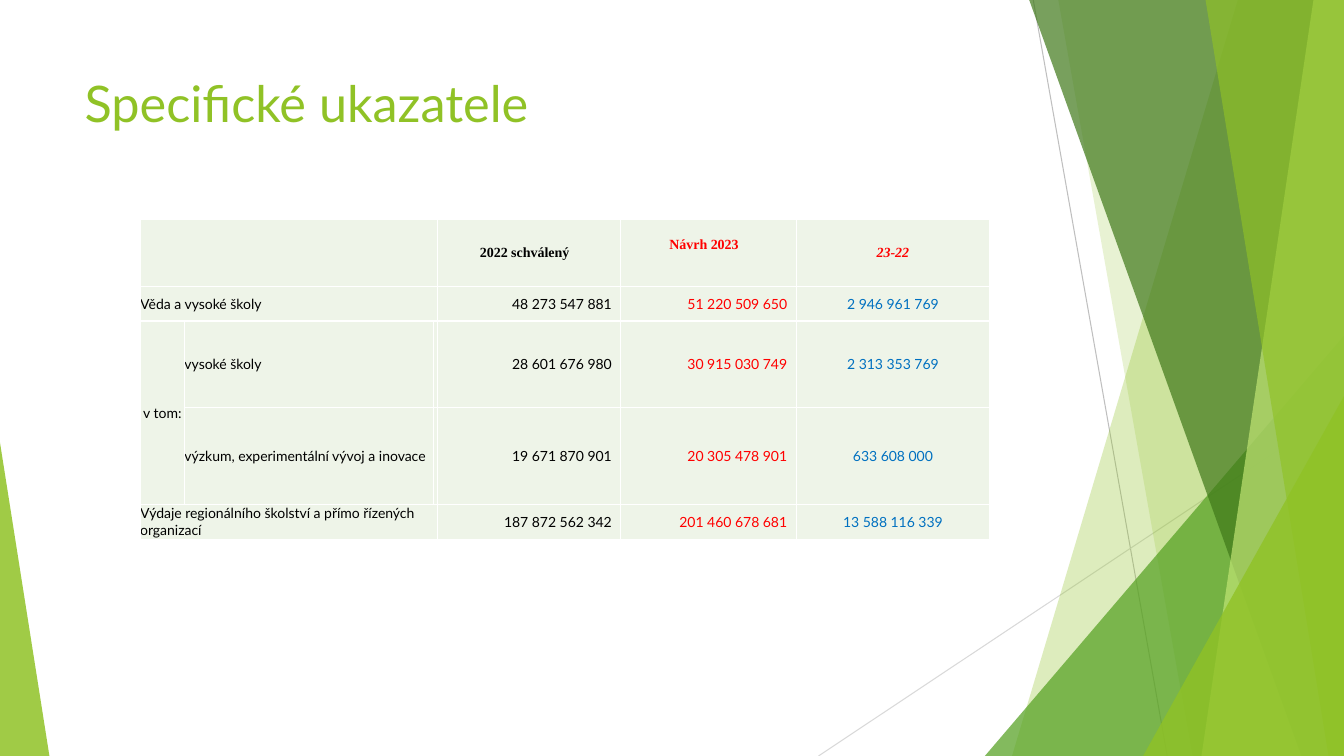
from dataclasses import dataclass

from lxml.etree import SubElement
from pptx import Presentation
from pptx.dml.color import RGBColor
from pptx.enum.shapes import MSO_CONNECTOR as Connector, MSO_SHAPE as Shape
from pptx.enum.text import MSO_ANCHOR as Anchor, PP_ALIGN as Align
from pptx.oxml.ns import qn
from pptx.util import Inches, Pt


@dataclass(frozen=True)
class Theme:
    green: str = "90C226"
    leaf: str = "54A021"
    forest: str = "3F7819"
    lime: str = "C0E474"
    cell: str = "EEF4E8"
    white: str = "FFFFFF"
    black: str = "000000"
    red: str = "FF0000"
    blue: str = "0070C0"
    body_font: str = "Lato"
    header_font: str = "Times New Roman"
    title_size: int = 36
    table_size: int = 10
    inset: float = 0.09


THEME = Theme()
WIDTH, HEIGHT = Inches(13.333), Inches(7.5)

# Decoration, back to front, in percent of the slide's width and height
RAYS = [((76.88, 0), (86.85, 100), "BFBFBF"), ((100, 53.73), (60.9, 100), "D9D9D9")]
BACK_BANDS = [(92.1, 75.3, THEME.green, 30), (78.75, 88.73, THEME.green, 20)]
BACK_PEAK = (73.28, 44.4, 26.72, 1, THEME.leaf, 72)
FRONT_BANDS = [(76.58, 96.83, THEME.forest, 70), (97.73, 89.4, THEME.lime, 70),
               (89.7, 98.85, THEME.green, 65)]
FRONT_PEAKS = [(85.05, 52.4, 14.95, 1, THEME.green, 80),
               (0, 58.53, 3.68, 0, THEME.green, 85)]

# Table grid, in percent of the slide's width and height
COLUMNS = [3.3, 18.52, 0.3, 13.65, 13.05, 14.4]
ROWS = [8.8, 4.6, 11.47, 12.8, 4.6]
HEADERS = ["2022 schválený", "Návrh 2023", "23-22"]
# Label column, label, approved 2022, proposed 2023, difference
INDICATORS = [
    (0, "Věda a vysoké školy", "48 273 547 881", "51 220 509 650", "2 946 961 769"),
    (1, "vysoké školy", "28 601 676 980", "30 915 030 749", "2 313 353 769"),
    (1, "výzkum, experimentální vývoj a inovace",
     "19 671 870 901", "20 305 478 901", "633 608 000"),
    (0, "Výdaje regionálního školství a přímo řízených organizací",
     "187 872 562 342", "201 460 678 681", "13 588 116 339"),
]


def across(share):
    return round(WIDTH * share / 100)


def down(share):
    return round(HEIGHT * share / 100)


def style_font(font, color, size, name=THEME.body_font, bold=False, italic=False):
    font.name, font.size, font.bold, font.italic = name, Pt(size), bold, italic
    font.color.rgb = RGBColor.from_string(color)


def paint(facet, color, opacity):
    facet.shadow.inherit = False
    facet.line.fill.background()
    facet.fill.solid()
    facet.fill.fore_color.rgb = RGBColor.from_string(color)
    tint = facet.fill._xPr.find(qn("a:solidFill"))[0]
    SubElement(tint, qn("a:alpha"), val=str(opacity * 1000))


def add_ray(slide, start, end, color):
    ray = slide.shapes.add_connector(
        Connector.STRAIGHT, across(start[0]), down(start[1]), across(end[0]), down(end[1]))
    ray.line.color.rgb = RGBColor.from_string(color)
    ray.line.width = Pt(0.75)
    SubElement(ray._element.spPr, qn("a:effectLst"))


def add_band(slide, top_left, bottom_left, color, opacity):
    """Full-height band from a slanted left side to the slide's right edge."""
    outline = slide.shapes.build_freeform(across(top_left), 0)
    outline.add_line_segments(
        [(WIDTH, 0), (WIDTH, HEIGHT), (across(bottom_left), HEIGHT)], close=True)
    paint(outline.convert_to_shape(), color, opacity)


def add_peak(slide, left, top, width, apex, color, opacity):
    """Right triangle standing on the slide's bottom edge."""
    peak = slide.shapes.add_shape(
        Shape.ISOSCELES_TRIANGLE, across(left), down(top), across(width), down(100 - top))
    peak.adjustments[0] = apex
    paint(peak, color, opacity)


def add_decoration(slide):
    for ray in RAYS:
        add_ray(slide, *ray)
    for band in BACK_BANDS:
        add_band(slide, *band)
    add_peak(slide, *BACK_PEAK)
    for band in FRONT_BANDS:
        add_band(slide, *band)
    for peak in FRONT_PEAKS:
        add_peak(slide, *peak)


def set_title(slide, wording):
    title = slide.shapes.title
    title.left, title.top = across(5.55), down(8.93)
    title.width, title.height = across(70.5), down(19.2)
    title.text_frame.text = wording
    title.text_frame.vertical_anchor = Anchor.TOP
    heading = title.text_frame.paragraphs[0]
    heading.alignment = Align.LEFT
    style_font(heading.font, THEME.green, THEME.title_size)


def format_cell(cell):
    cell.margin_left = cell.margin_right = cell.margin_top = cell.margin_bottom = 0
    cell.vertical_anchor = Anchor.MIDDLE
    style_font(cell.text_frame.paragraphs[0].font, THEME.black, THEME.table_size)
    # Borders come before the fill in the cell's properties
    properties = cell._tc.get_or_add_tcPr()
    for side in ("lnL", "lnR", "lnT", "lnB"):
        border = SubElement(properties, qn(f"a:{side}"), w=str(Pt(1)))
        SubElement(SubElement(border, qn("a:solidFill")), qn("a:srgbClr"), val=THEME.white)
    cell.fill.solid()
    cell.fill.fore_color.rgb = RGBColor.from_string(THEME.cell)


def write(cell, wording, color=THEME.black, align=Align.LEFT, inset=0, **font_style):
    cell.text = wording
    cell.margin_right = Inches(inset)
    entry = cell.text_frame.paragraphs[0]
    entry.alignment = align
    style_font(entry.font, color, THEME.table_size, **font_style)


def add_indicator_table(slide):
    table = slide.shapes.add_table(
        len(ROWS), len(COLUMNS), across(10.43), down(29.07),
        across(sum(COLUMNS)), down(sum(ROWS))).table
    table.first_row = table.horz_banding = False
    for column, share in zip(table.columns, COLUMNS):
        column.width = across(share)
    for row, share in zip(table.rows, ROWS):
        row.height = down(share)
    for cell in table.iter_cells():
        format_cell(cell)

    # Header row
    table.cell(0, 0).merge(table.cell(0, 2))
    header_looks = [(THEME.black, THEME.inset, False), (THEME.red, THEME.inset, False),
                    (THEME.red, 0, True)]
    for column, (header, (color, inset, italic)) in enumerate(zip(HEADERS, header_looks), 3):
        write(table.cell(0, column), header, color, Align.CENTER, inset,
              name=THEME.header_font, bold=True, italic=italic)
    table.cell(0, 4).margin_bottom = Inches(0.16)

    # Indicator rows
    amount_looks = [(THEME.black, Align.RIGHT, THEME.inset),
                    (THEME.red, Align.RIGHT, THEME.inset), (THEME.blue, Align.CENTER, 0)]
    for row, (label_column, label, *amounts) in enumerate(INDICATORS, 1):
        if label_column == 0:
            table.cell(row, 0).merge(table.cell(row, 2))
        write(table.cell(row, label_column), label)
        for column, (amount, look) in enumerate(zip(amounts, amount_looks), 3):
            write(table.cell(row, column), amount, *look)

    # Shared label of the two breakdown rows
    table.cell(2, 0).merge(table.cell(3, 0))
    write(table.cell(2, 0), "v tom:", align=Align.CENTER)


def main():
    deck = Presentation()
    deck.slide_width, deck.slide_height = WIDTH, HEIGHT
    slide = deck.slides.add_slide(deck.slide_layouts[5])
    add_decoration(slide)
    set_title(slide, "Specifické ukazatele")
    add_indicator_table(slide)
    deck.save("out.pptx")


if __name__ == "__main__":
    main()
